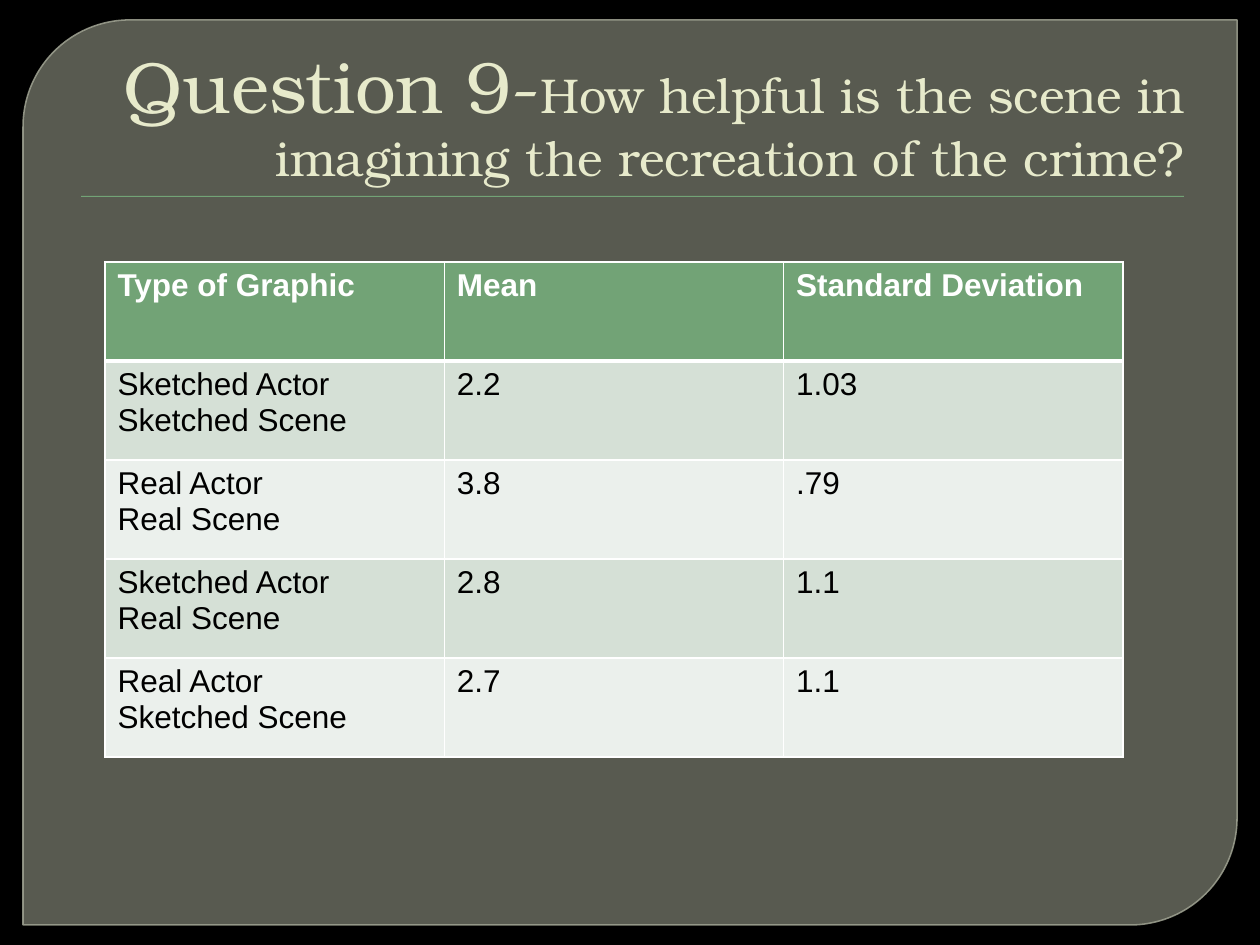
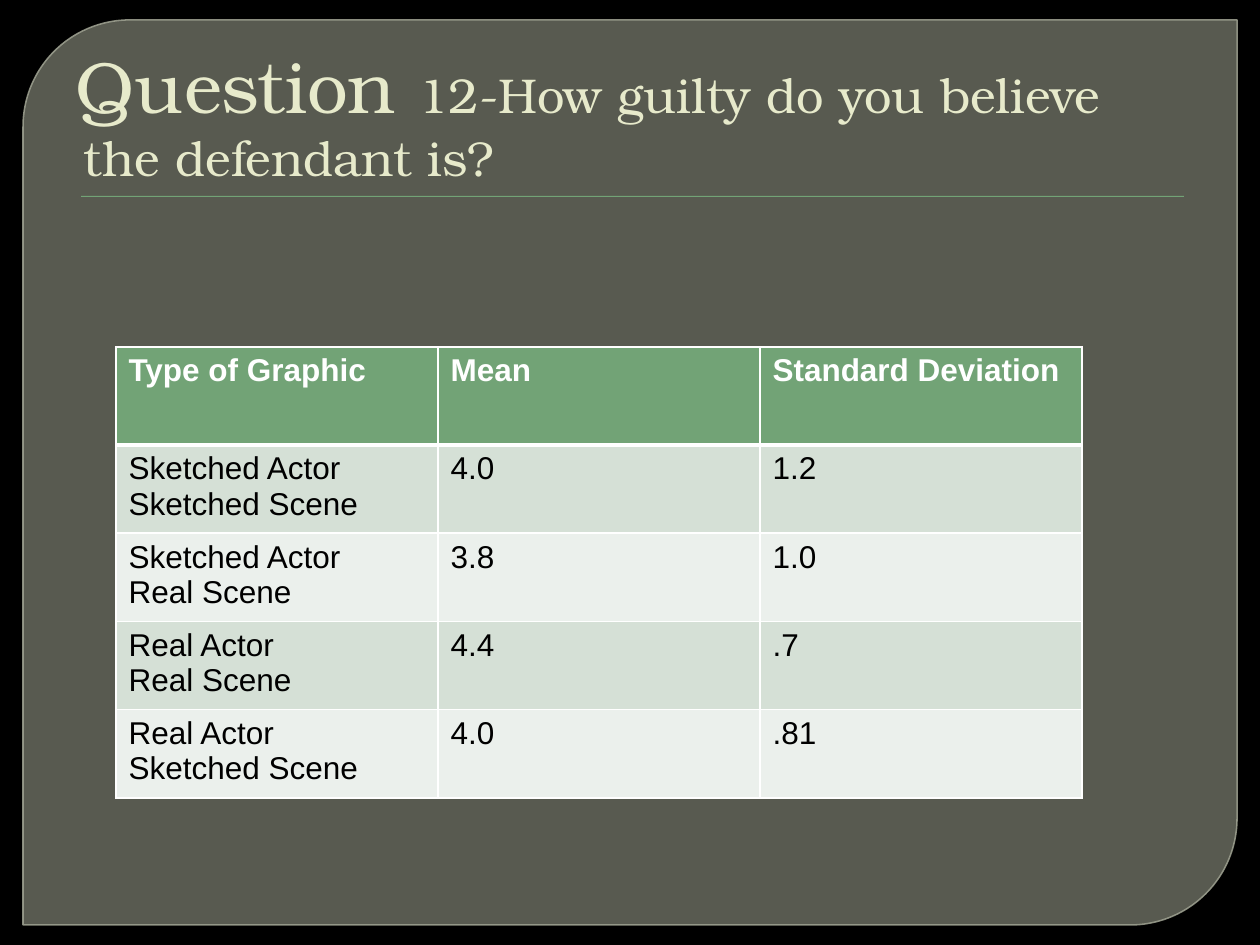
"""Build two survey result slides, each with a title and a table of ratings."""
import pptx
import pptx.dml.color
import pptx.enum.shapes
import pptx.enum.text
import pptx.oxml
import pptx.oxml.ns
import pptx.util

HEAD = ("Type of Graphic", "Mean", "Standard Deviation")
SS = "Sketched Actor\nSketched Scene"
SR = "Sketched Actor\nReal Scene"
RS = "Real Actor\nSketched Scene"
RR = "Real Actor\nReal Scene"
SLIDES = [
    {
        "title": ("Question 9-", "How helpful is the scene in imagining the recreation of the crime?"),
        "align": "RIGHT",
        "box": (105, 262, 1018), "head": 99, "row": 99,
        "rows": [(SS, "2.2", "1.03"), (RR, "3.8", ".79"), (SR, "2.8", "1.1"), (RS, "2.7", "1.1")],
    },
    {
        "title": ("Question ", "12-How guilty do you believe the defendant is?"),
        "align": "LEFT",
        "box": (116, 347, 966), "head": 98, "row": 88,
        "rows": [(SS, "4.0", "1.2"), (SR, "3.8", "1.0"), (RR, "4.4", ".7"), (RS, "4.0", ".81")],
    },
]
COLORS = {
    "back": "000000", "panel": "888B7B", "edge": "9DA090", "green": "72A376",
    "title": "E7EACB", "white": "FFFFFF", "ink": "000000", "odd": "D5E0D6", "even": "EBF0EC",
}
SCALE = 914400 / 126
MAIN, BODY = "TeX Gyre Bonum", "Arial"
NS = 'xmlns:a="http://schemas.openxmlformats.org/drawingml/2006/main"'


def px(*sizes):
    return [pptx.util.Emu(round(size * SCALE)) for size in sizes]


def paint(fill, name, alpha=100):
    fill.solid()
    fill.fore_color.rgb = pptx.dml.color.RGBColor.from_string(COLORS[name])
    if alpha < 100:
        node = fill._xPr.find(".//" + pptx.oxml.ns.qn("a:srgbClr"))
        node.append(pptx.oxml.parse_xml(f'<a:alpha {NS} val="{alpha * 1000}"/>'))


def write(frame, text, size=18, font=BODY, color="ink", bold=False, align="LEFT", hang=0):
    """Fill a frame; a tuple of text pairs with a tuple of sizes as runs of one line."""
    parts = text if isinstance(text, tuple) else None
    for i, line in enumerate([parts] if parts else text.split("\n")):
        para = frame.paragraphs[0] if i == 0 else frame.add_paragraph()
        para.alignment = getattr(pptx.enum.text.PP_ALIGN, align)
        if hang:
            props = para._p.get_or_add_pPr()
            props.set("marL", str(px(hang)[0]))
            props.set("indent", str(px(-hang)[0]))
        for part, points in zip(line, size) if parts else [(line, size)]:
            run = para.add_run()
            run.text = part
            run.font.size = pptx.util.Pt(points)
            run.font.name, run.font.bold = font, bold
            run.font.color.rgb = pptx.dml.color.RGBColor.from_string(COLORS[color])


def frame_slide(slide):
    paint(slide.background.fill, "back")
    kinds = pptx.enum.shapes.MSO_SHAPE
    panel = slide.shapes.add_shape(kinds.ROUND_2_DIAG_RECTANGLE, *px(23, 20, 1214, 905))
    panel.adjustments[0], panel.adjustments[1] = 0.118, 0
    panel.shadow.inherit = False
    paint(panel.fill, "panel", 65)
    paint(panel.line.fill, "edge", 88)
    panel.line.width = pptx.util.Pt(0.87)
    rule = slide.shapes.add_shape(kinds.RECTANGLE, *px(81, 196, 1103, 1))
    paint(rule.fill, "green")
    rule.line.fill.background()
    rule.shadow.inherit = False
    glow = rule._element.spPr.find(pptx.oxml.ns.qn("a:effectLst"))
    glow.append(pptx.oxml.parse_xml(
        f'<a:outerShdw {NS} blurRad="12700" dist="12700" dir="5400000">'
        '<a:srgbClr val="000000"><a:alpha val="75000"/></a:srgbClr></a:outerShdw>'))


def add_title(slide, text, align):
    frame = slide.shapes.add_textbox(*px(63, 35, 1134, 158)).text_frame
    frame.word_wrap = True
    frame.vertical_anchor = pptx.enum.text.MSO_ANCHOR.BOTTOM
    write(frame, text, size=(41.4, 27.9), font=MAIN, color="title", align=align, hang=8)


def edge_cell(cell, row):
    props = cell._tc.get_or_add_tcPr()
    for side in "LRTB":
        wide = 3 if (row, side) in ((0, "B"), (1, "T")) else 1
        props.append(pptx.oxml.parse_xml(
            f'<a:ln{side} {NS} w="{wide * 12700}"><a:solidFill>'
            f'<a:srgbClr val="{COLORS["white"]}"/></a:solidFill></a:ln{side}>'))


def add_grid(slide, box, head, row, rows):
    tall = head + row * len(rows)
    table = slide.shapes.add_table(len(rows) + 1, len(HEAD), *px(*box, tall)).table
    for col in table.columns:
        col.width = px(box[2] / len(HEAD))[0]
    for r, items in enumerate([HEAD, *rows]):
        table.rows[r].height = px(row if r else head)[0]
        tint = ("odd" if r % 2 else "even") if r else "green"
        for c, text in enumerate(items):
            cell = table.cell(r, c)
            edge_cell(cell, r)
            paint(cell.fill, tint)
            write(cell.text_frame, text, color="ink" if r else "white", bold=r == 0)


def main():
    deck = pptx.Presentation()
    deck.slide_width, deck.slide_height = px(1260, 945)
    for page in SLIDES:
        slide = deck.slides.add_slide(deck.slide_layouts[6])
        frame_slide(slide)
        add_title(slide, page["title"], page["align"])
        add_grid(slide, page["box"], page["head"], page["row"], page["rows"])
    deck.save("out.pptx")


if __name__ == "__main__":
    main()
